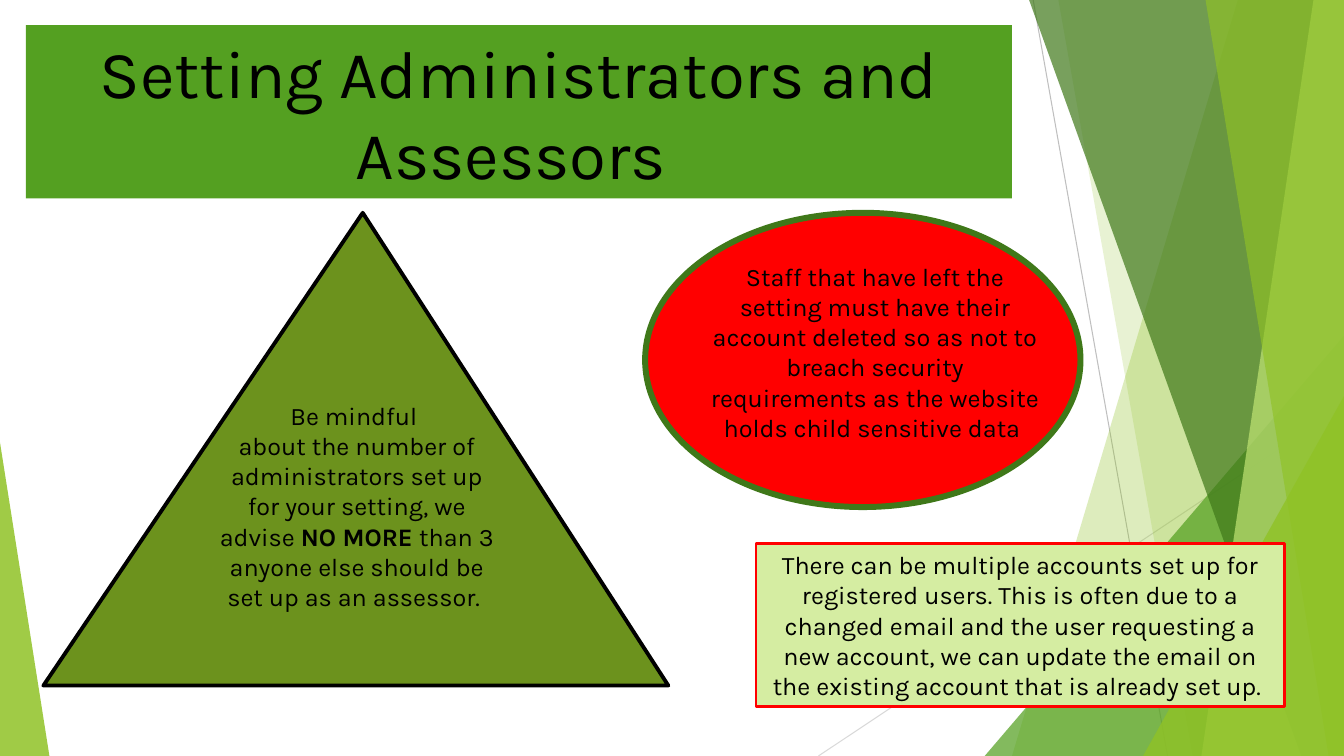
"""Build the slide on setting administrators and assessors."""
from lxml import etree
from pptx import Presentation
from pptx.dml.color import RGBColor
from pptx.enum.shapes import MSO_CONNECTOR, MSO_SHAPE
from pptx.enum.text import MSO_ANCHOR, MSO_AUTO_SIZE, PP_ALIGN
from pptx.oxml.ns import qn
from pptx.util import Pt

STRAIGHT = MSO_CONNECTOR.STRAIGHT
TRIANGLE, OVAL, RECTANGLE = MSO_SHAPE.ISOSCELES_TRIANGLE, MSO_SHAPE.OVAL, MSO_SHAPE.RECTANGLE
TOP, MIDDLE = MSO_ANCHOR.TOP, MSO_ANCHOR.MIDDLE
CENTER = PP_ALIGN.CENTER
NO_AUTOFIT = MSO_AUTO_SIZE.NONE

BLACK = RGBColor(0x00, 0x00, 0x00)
RED = RGBColor(0xFF, 0x00, 0x00)
LIME = RGBColor(0x90, 0xC2, 0x26)
PALE_LIME = RGBColor(0xC0, 0xE4, 0x74)
MIST = RGBColor(0xD5, 0xED, 0xA2)
GREEN = RGBColor(0x54, 0xA0, 0x21)
DARK_GREEN = RGBColor(0x3F, 0x78, 0x19)
OLIVE = RGBColor(0x6C, 0x92, 0x1D)
GREY = RGBColor(0xBF, 0xBF, 0xBF)
LIGHT_GREY = RGBColor(0xD9, 0xD9, 0xD9)

WIDTH, HEIGHT = 960, 540
FONT = "Karla"


def paint(shape, fill, opacity=100, outline=None, weight=0):
    shape.shadow.inherit = False
    shape.fill.solid()
    shape.fill.fore_color.rgb = fill
    if opacity < 100:
        color = shape.fill._xPr.find(qn("a:solidFill"))[0]
        etree.SubElement(color, qn("a:alpha")).set("val", str(opacity * 1000))
    if outline is None:
        shape.line.fill.background()
    else:
        shape.line.color.rgb = outline
        shape.line.width = Pt(weight)


def format_text(frame, size, anchor):
    frame.word_wrap = True
    frame.auto_size = NO_AUTOFIT
    frame.vertical_anchor = anchor
    for paragraph in frame.paragraphs:
        paragraph.alignment = CENTER
        for run in paragraph.runs:
            run.font.name = FONT
            run.font.size = Pt(size)
            run.font.color.rgb = BLACK


prs = Presentation()
prs.slide_width, prs.slide_height = Pt(WIDTH), Pt(HEIGHT)
slide = prs.slides.add_slide(prs.slide_layouts[5])
shapes = slide.shapes

for start_x, start_y, end_x, color in [
    (738, 0, 834, GREY),
    (WIDTH, 290, 584.6, LIGHT_GREY),
]:
    ray = shapes.add_connector(STRAIGHT, Pt(start_x), Pt(start_y), Pt(end_x), Pt(HEIGHT))
    ray.line.color.rgb = color
    ray.line.width = Pt(0.75)
    etree.SubElement(ray._element.spPr, qn("a:effectLst"))

# fmt: off
facets = [
    ((884.2, 722.9), LIME, 30),
    ((756, 851.8), LIME, 20),
    ((703.4, 239.8, 256.6, 1), GREEN, 72),
    ((735.1, 929.5), DARK_GREEN, 70),
    ((938.2, 858.2), PALE_LIME, 70),
    ((861.1, 949), LIME, 65),
    ((816.5, 283, 143.5, 1), LIME, 80),
    ((0, 316.1, 35.3, 0), LIME, 85),
]
# fmt: on
for geometry, color, opacity in facets:
    if len(geometry) == 2:
        top_x, bottom_x = geometry
        outline = shapes.build_freeform(Pt(top_x), Pt(0))
        outline.add_line_segments(
            [(Pt(WIDTH), Pt(0)), (Pt(WIDTH), Pt(HEIGHT)), (Pt(bottom_x), Pt(HEIGHT))]
        )
        facet = outline.convert_to_shape()
    else:
        left, top, width, apex = geometry
        facet = shapes.add_shape(TRIANGLE, Pt(left), Pt(top), Pt(width), Pt(HEIGHT - top))
        facet.adjustments[0] = apex
    paint(facet, color, opacity)

title = shapes.title
title.left, title.top, title.width, title.height = Pt(18.5), Pt(18), Pt(704.3), Pt(123.8)
title.text_frame.text = "Setting Administrators and Assessors "
paint(title, GREEN)
format_text(title.text_frame, 48, MIDDLE)

leavers_oval = shapes.add_shape(OVAL, Pt(460.8), Pt(152), Pt(311), Pt(210.2))
paint(leavers_oval, RED, outline=DARK_GREEN, weight=4.25)
leavers = shapes.add_textbox(Pt(499.7), Pt(182.9), Pt(250.6), Pt(138.2)).text_frame
leavers.text = (
    "Staff that have left the setting must have their account deleted so as not to "
    "breach security requirements as the website holds child sensitive data "
)
format_text(leavers, 18, TOP)

accounts = shapes.add_shape(RECTANGLE, Pt(540), Pt(388.1), Pt(377.3), Pt(116.6))
paint(accounts, MIST, outline=RED, weight=2)
accounts.text_frame.text = (
    "There can be multiple accounts set up for registered users. This is often due to "
    "a changed email and the user requesting a new account, we can update the email on "
    "the existing account that is already set up. "
)
format_text(accounts.text_frame, 18, MIDDLE)

limit_triangle = shapes.add_shape(TRIANGLE, Pt(31), Pt(152), Pt(446.4), Pt(337.7))
limit_triangle.adjustments[0] = 0.511
paint(limit_triangle, OLIVE, outline=BLACK, weight=2.75)
limit = shapes.add_textbox(Pt(148.3), Pt(282.2), Pt(213.1), Pt(159.8)).text_frame
limit.text = "Be mindful \nabout the number of administrators set up for your setting, we advise "
advice = limit.paragraphs[1]
for wording, bold in [
    ("NO MORE ", True),
    ("than 3 anyone else should be set up as an assessor. ", False),
]:
    run = advice.add_run()
    run.text = wording
    run.font.bold = bold
format_text(limit, 18, TOP)

prs.save("out.pptx")
